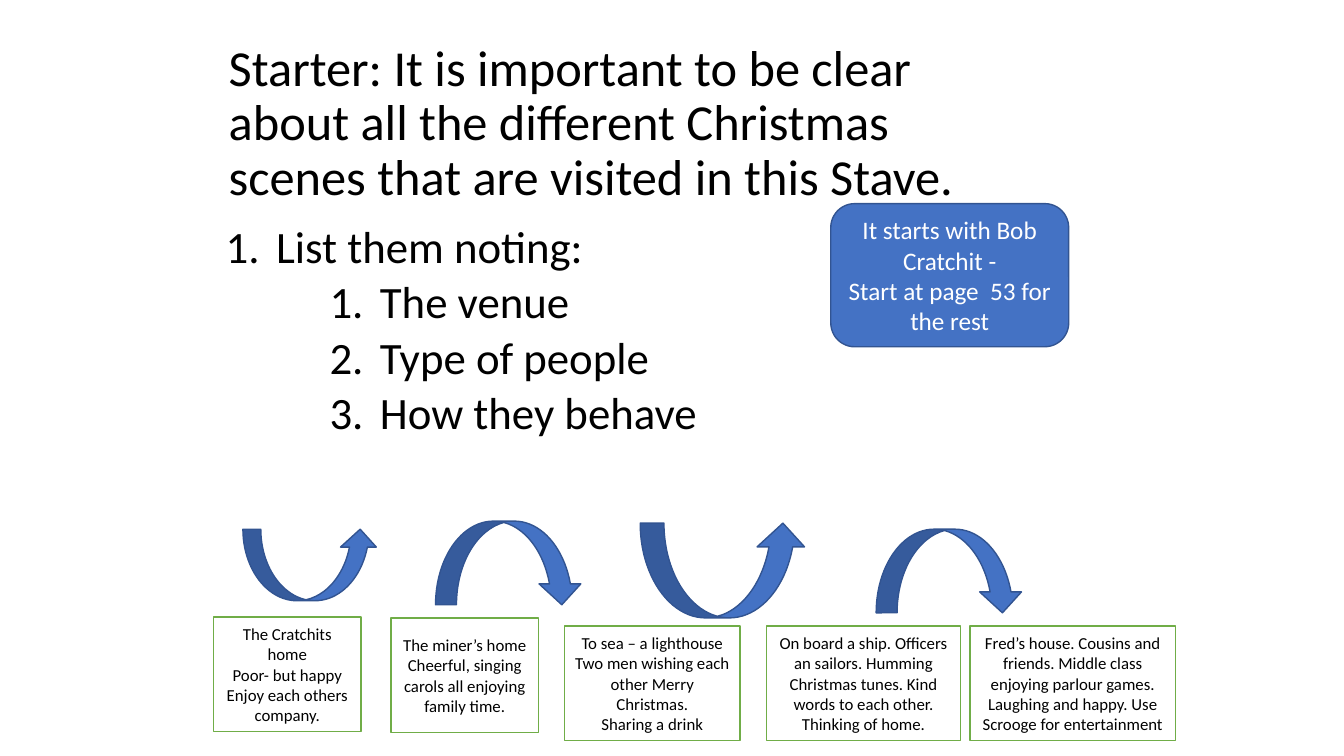
from lxml.etree import SubElement as Sub
from pptx import Presentation
from pptx.dml.color import RGBColor
from pptx.enum.shapes import MSO_SHAPE as Shape
from pptx.enum.text import MSO_ANCHOR as Anchor, PP_ALIGN as Align
from pptx.oxml.ns import qn
from pptx.util import Inches, Pt

# Content
TITLE = ["Starter: It is important to be clear about all the different "
         "Christmas scenes that are visited in this Stave."]
TASKS = [(0, "List them noting:"), (2, "The venue"),
         (2, "Type of people"), (2, "How they behave")]
HINT = ["It starts with Bob Cratchit -", "Start at page  53 for the rest"]

# Each scene: left, top, width, lines
SCENES = [
    (2.12, 6.12, 1.46, ["The Cratchits home", "Poor- but happy",
                        "Enjoy each others company."]),
    (3.88, 6.13, 1.46, ["The miner’s home",
                        "Cheerful, singing carols all enjoying family time."]),
    (5.6, 6.21, 1.74, ["To sea – a lighthouse",
                       "Two men wishing each other Merry Christmas.",
                       "Sharing a drink"]),
    (7.6, 6.21, 1.93, ["On board a ship. Officers an sailors. Humming Christmas "
                       "tunes. Kind words to each other. Thinking of home."]),
    (9.62, 6.21, 2.04, ["Fred’s house. Cousins and friends. Middle class "
                        "enjoying parlour games. Laughing and happy. "
                        "Use Scrooge for entertainment"]),
]
# Arrows swing below and above by turns: left, top, width, height
ARROWS = [(2.41, 5.25, 1.34, 0.71), (4.32, 5.17, 1.46, 0.83),
          (6.35, 5.19, 1.65, 0.94), (8.69, 5.25, 1.46, 0.83)]
TURNS = [Shape.CURVED_UP_ARROW, Shape.CURVED_DOWN_ARROW]

# Style
FONT = "Calibri"
BLACK = RGBColor(0x00, 0x00, 0x00)
WHITE = RGBColor(0xFF, 0xFF, 0xFF)
BLUE = RGBColor(0x44, 0x72, 0xC4)
NAVY = RGBColor(0x32, 0x54, 0x91)
GREEN = RGBColor(0x70, 0xAD, 0x47)
SCENE_H = 1.14
INDENT = {0: 0.62, 2: 1.65}
HANG = -0.5

deck = Presentation()
deck.slide_width, deck.slide_height = Inches(13.33), Inches(7.5)
slide = deck.slides.add_slide(deck.slide_layouts[6])


def write(shape, lines, size, color=BLACK, align=Align.CENTER,
          anchor=Anchor.MIDDLE, space=1.0):
    """Fill a shape with one paragraph per line."""
    frame = shape.text_frame
    frame.word_wrap = True
    frame.vertical_anchor = anchor
    for i, line in enumerate(lines):
        para = frame.add_paragraph() if i else frame.paragraphs[0]
        para.alignment, para.line_spacing = align, space
        run = para.add_run()
        run.text = line
        run.font.name, run.font.size = FONT, Pt(size)
        run.font.color.rgb = color
    return frame.paragraphs


def box(*at):
    return slide.shapes.add_textbox(*map(Inches, at))


def draw(kind, at, fill=BLUE, line=NAVY):
    shape = slide.shapes.add_shape(kind, *map(Inches, at))
    shape.shadow.inherit = False
    shape.fill.solid()
    shape.fill.fore_color.rgb = fill
    shape.line.color.rgb = line
    shape.line.width = Pt(1)
    return shape


def number(para, level):
    """Give a paragraph its level, hanging indent and number."""
    para.level = level
    para.space_before = Pt(5 if level else 10)
    props = para._p.get_or_add_pPr()
    props.set("marL", str(Inches(INDENT[level])))
    props.set("indent", str(Inches(HANG)))
    Sub(props, qn("a:buFont"), typeface="+mj-lt")
    Sub(props, qn("a:buAutoNum"), type="arabicPeriod")


# Title and numbered tasks
write(box(2.17, 0.3, 8.2, 1.87), TITLE, 36, align=Align.LEFT, space=0.9)
paras = write(box(2.02, 2.18, 8.33, 2.94), [text for _, text in TASKS], 32,
              align=Align.LEFT, anchor=Anchor.TOP, space=0.9)
for para, (level, _) in zip(paras, TASKS):
    number(para, level)

# Hint
write(draw(Shape.ROUNDED_RECTANGLE, (8.24, 2.02, 2.36, 1.42)), HINT, 18, WHITE)

# Arrows from scene to scene
for i, at in enumerate(ARROWS):
    draw(TURNS[i % 2], at)

# Scenes
for left, top, width, lines in SCENES:
    write(draw(Shape.RECTANGLE, (left, top, width, SCENE_H), WHITE, GREEN),
          lines, 12)

deck.save("out.pptx")
